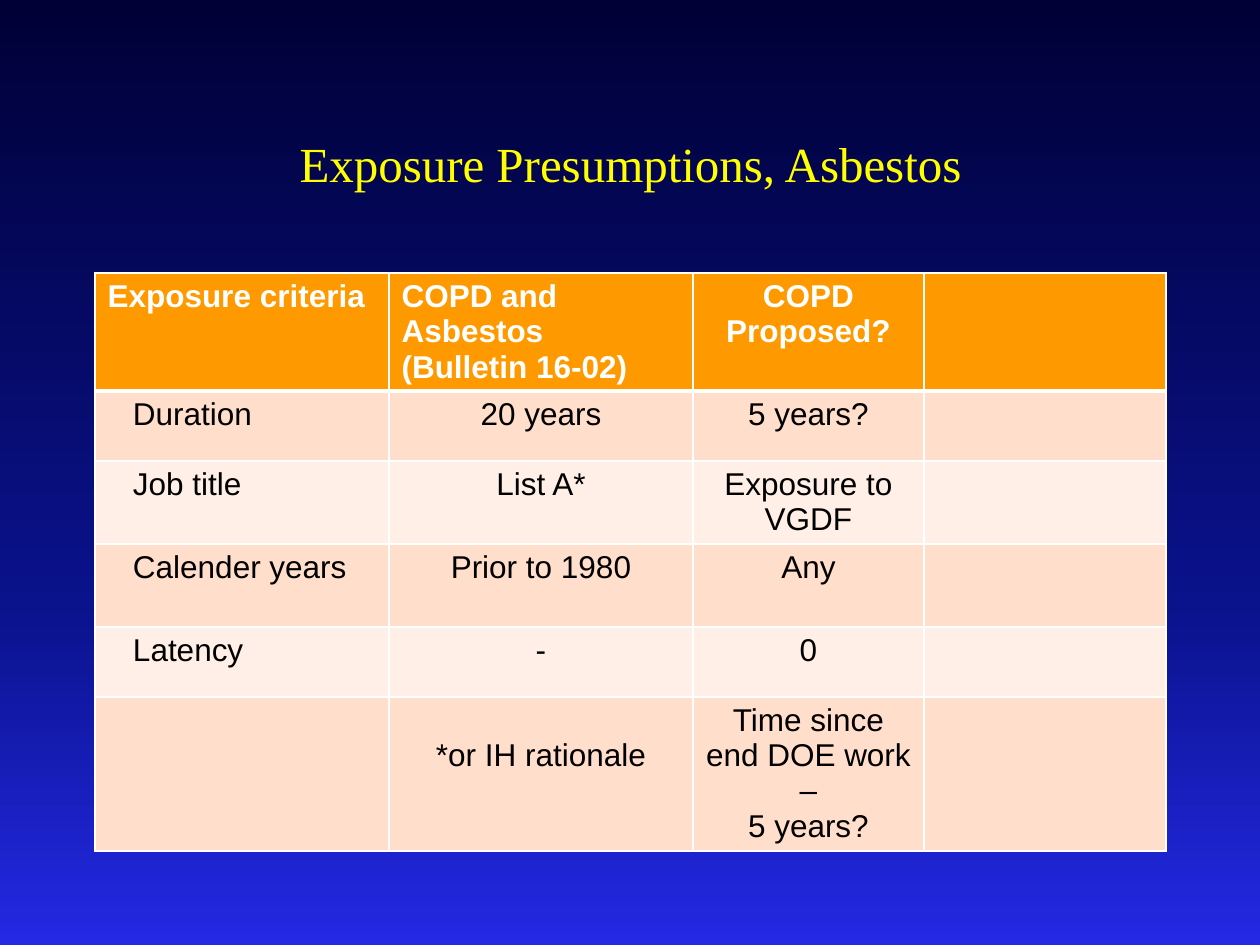
from dataclasses import dataclass

import lxml.etree
import pptx
import pptx.dml.color
import pptx.enum.text
import pptx.oxml.ns
import pptx.util

EMU_PER_PX = 914400 / 126
CENTER = pptx.enum.text.PP_ALIGN.CENTER
LEFT = pptx.enum.text.PP_ALIGN.LEFT


@dataclass(frozen=True)
class Theme:
    background: tuple = ((0, "000036"), (64, "0A128C"), (100, "2429E4"))
    title_font: str = "Times New Roman"
    title_size: int = 28
    title_color: str = "FFFF00"
    table_font: str = "Arial"
    table_size: int = 18
    header_fill: str = "FF9900"
    header_text: str = "FFFFFF"
    body_text: str = "000000"
    band_fills: tuple = ("FFDECC", "FFEFE7")
    border: str = "FFFFFF"
    thin: int = 1
    thick: int = 3


THEME = Theme()

TITLE_BOX = (95, 84, 1071, 158)
TABLE_BOX = (95, 273, 1071, 578)
COLUMN_WIDTHS = (294, 304, 231, 242)
ROW_HEIGHTS = (118, 70, 83, 83, 70, 154)
CELL_MARGIN = 6
LABEL_INDENT = 26
LINE_HEIGHT = 35
ROWS = (
    ("Exposure criteria", "COPD and Asbestos\n(Bulletin 16-02)", "COPD\nProposed?", ""),
    ("Duration", "20 years", "5 years?", ""),
    ("Job title", "List A*", "Exposure to VGDF", ""),
    ("Calender years", "Prior to 1980", "Any", ""),
    ("Latency", "-", "0", ""),
    ("", "*or IH rationale", "Time since end DOE work –\n5 years?", ""),
)


def px(length):
    return pptx.util.Emu(round(length * EMU_PER_PX))


def rgb(color):
    return pptx.dml.color.RGBColor.from_string(color)


def add_element(parent, tag, **attributes):
    element = lxml.etree.SubElement(parent, pptx.oxml.ns.qn(tag))
    for name, value in attributes.items():
        element.set(name, str(value))
    return element


def add_span(para, text, font, size, color, bold=False):
    span = para.add_run()
    span.text = text
    span.font.name = font
    span.font.size = pptx.util.Pt(size)
    span.font.color.rgb = rgb(color)
    span.font.bold = bold


def paint_background(page):
    fill = page.background.fill
    fill.gradient()
    fill.gradient_angle = 270
    stops = page.element.find(".//" + pptx.oxml.ns.qn("a:gsLst"))
    for stop in list(stops):
        stops.remove(stop)
    for percent, color in THEME.background:
        stop = add_element(stops, "a:gs", pos=percent * 1000)
        add_element(stop, "a:srgbClr", val=color)


def place_title(page, box, text):
    title = page.shapes.title
    title.left, title.top, title.width, title.height = map(px, box)
    frame = title.text_frame
    frame.word_wrap = True
    frame.vertical_anchor = pptx.enum.text.MSO_ANCHOR.MIDDLE
    para = frame.paragraphs[0]
    para.alignment = CENTER
    add_span(para, text, THEME.title_font, THEME.title_size, THEME.title_color)


def set_borders(cell, top, bottom):
    """Draw all four sides; top and bottom are widths in points."""
    properties = cell._tc.get_or_add_tcPr()
    sides = (("L", THEME.thin), ("R", THEME.thin), ("T", top), ("B", bottom))
    for side, width in sides:
        line = add_element(properties, "a:ln" + side, w=pptx.util.Pt(width))
        fill = add_element(line, "a:solidFill")
        add_element(fill, "a:srgbClr", val=THEME.border)


def fill_cell(cell, text, row, column):
    header = row == 0
    set_borders(
        cell,
        top=THEME.thick if row == 1 else THEME.thin,
        bottom=THEME.thick if header else THEME.thin,
    )
    cell.fill.solid()
    band = THEME.band_fills[(row - 1) % 2]
    cell.fill.fore_color.rgb = rgb(THEME.header_fill if header else band)
    cell.margin_top = cell.margin_bottom = px(CELL_MARGIN)
    if column == 0 and not header:
        cell.margin_left = px(2 * CELL_MARGIN + LABEL_INDENT)
    left_aligned = column == 0 or (header and column == 1)
    color = THEME.header_text if header else THEME.body_text
    for index, line in enumerate(text.split("\n")):
        frame = cell.text_frame
        para = frame.add_paragraph() if index else frame.paragraphs[0]
        para.alignment = LEFT if left_aligned else CENTER
        para.font.size = pptx.util.Pt(THEME.table_size)
        if line:
            add_span(para, line, THEME.table_font, THEME.table_size, color, header)


def place_criteria_table(page, box):
    frame = page.shapes.add_table(len(ROWS), len(COLUMN_WIDTHS), *map(px, box))
    table = frame.table
    table.first_row = True
    table.horz_banding = False
    for column, width in zip(table.columns, COLUMN_WIDTHS):
        column.width = px(width)
    for row, height in zip(table.rows, ROW_HEIGHTS):
        row.height = px(height)
    for row, texts in enumerate(ROWS):
        for column, text in enumerate(texts):
            fill_cell(table.cell(row, column), text, row, column)
    footnote = table.cell(len(ROWS) - 1, 1)
    footnote.margin_top = px(CELL_MARGIN + LINE_HEIGHT)


def main():
    deck = pptx.Presentation()
    deck.slide_width, deck.slide_height = px(1260), px(945)
    page = deck.slides.add_slide(deck.slide_layouts.get_by_name("Title Only"))
    paint_background(page)
    place_title(page, TITLE_BOX, "Exposure Presumptions, Asbestos")
    place_criteria_table(page, TABLE_BOX)
    deck.save("out.pptx")


if __name__ == "__main__":
    main()
